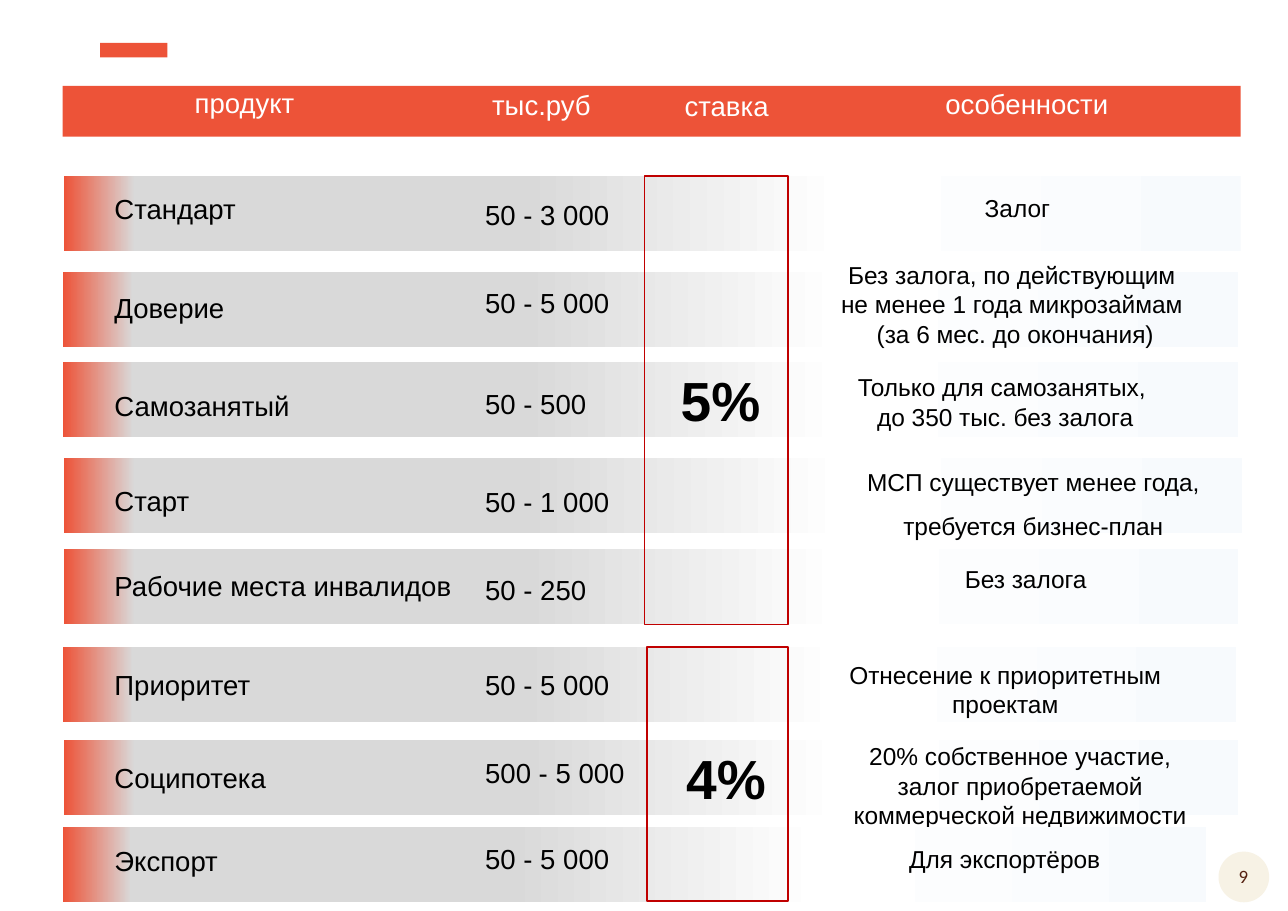
from lxml import etree
from pptx import Presentation
from pptx.dml.color import RGBColor
from pptx.enum import shapes, text
from pptx.oxml.ns import qn
from pptx.util import Pt

# Content: (text, left, top, width)
HEADERS = [
    ("продукт", 29.5, 52.5, 260.6),
    ("тыс.руб", 293, 54, 121.7),
    ("ставка", 414, 54.7, 121.7),
    ("особенности", 529.9, 53.3, 282.2),
]

# Each product: bar (left, top, width), name and its top, sum and its top,
# feature (text, left, top, width, line spacing)
PRODUCTS = [
    ((41.8, 115.2, 769), ("Стандарт", 121.7), ("50 - 3 000", 126),
     ("Залог", 529.2, 122.4, 271.4, 1)),
    ((41, 177.8, 768.2), ("Доверие", 186.5), ("50 - 5 000", 183.6),
     ("Без залога, по действующим \vне менее 1 года микрозаймам \v"
      "(за 6 мес. до окончания)", 529.9, 166.3, 267.1, 1)),
    ((41, 236.9, 768.2), ("Самозанятый", 250.6), ("50 - 500", 249.1),
     ("Только для самозанятых, \vдо 350 тыс. без залога", 516.2, 239.8, 281.5, 1)),
    ((41.8, 299.5, 769.7), ("Старт", 312.5), ("50 - 1 000", 313.2),
     ("МСП существует менее года,\vтребуется бизнес-план", 540.7, 292.3, 269.3, 1.5)),
    ((41.8, 358.6, 767.5), ("Рабочие места инвалидов", 368.6), ("50 - 250", 370.8),
     ("Без залога", 532.8, 365, 275, 1)),
    ((41, 422.6, 766.8), ("Приоритет", 432.7), ("50 - 5 000", 432.7),
     ("Отнесение к приоритетным\vпроектам", 517.7, 427.7, 278.6, 1)),
    ((41.8, 483.8, 767.5), ("Соципотека", 493.9), ("500 - 5 000", 490.3),
     ("20% собственное участие,\vзалог приобретаемой\vкоммерческой недвижимости",
      533.5, 481, 266.4, 1)),
    ((41, 540.7, 747.4), ("Экспорт", 547.9), ("50 - 5 000", 546.5),
     ("Для экспортёров", 535.7, 547.9, 241.9, 1)),
]

# Each rate: text, its left and top, frame (left, top, width, height)
RATES = [
    ("5%", 416.9, 236.2, (421.2, 115.2, 93.6, 293)),
    ("4%", 420.5, 483.1, (422.6, 422.6, 92.2, 166.3)),
]

THEME = {
    "accent": "ED5338", "frame": "C00000", "badge": "F7F2E5", "number": "562212",
    "ink": "000000", "paper": "FFFFFF", "font": "Arial", "number_font": "Calibri",
    "body": 18, "feature": 16, "rate": 36, "page": 12.3,
    "bar": [(0, "F7FAFD"), (34, "FFFFFF"), (61, "D9D9D9"),
            (94, "D9D9D9"), (100, "ED5338"), (100, "F2F2F2")],
}
BAR_HEIGHT = 49
NAME_LEFT, NAME_WIDTH = 67.7, 245
SUM_LEFT, SUM_WIDTH = 310, 113
CENTER = text.PP_ALIGN.CENTER
LEFT = text.PP_ALIGN.LEFT
RECT = shapes.MSO_SHAPE.RECTANGLE

prs = Presentation()
prs.slide_width, prs.slide_height = Pt(841.7), Pt(595.4)
s = prs.slides.add_slide(prs.slide_layouts[6])


def add_block(box, fill=None, line=None, kind=RECT):
    sp = s.shapes.add_shape(kind, *map(Pt, box))
    sp.shadow.inherit = False
    if fill:
        sp.fill.solid()
        sp.fill.fore_color.rgb = RGBColor.from_string(fill)
    else:
        sp.fill.background()
    if line:
        sp.line.color.rgb = RGBColor.from_string(line)
        sp.line.width = Pt(1.25)
    else:
        sp.line.fill.background()
    return sp


def add_bar(left, top, width):
    sp = add_block((left, top, width, BAR_HEIGHT))
    sp.fill.gradient()
    sp.fill.gradient_angle = 180
    stops = sp._element.spPr.find(qn("a:gradFill")).find(qn("a:gsLst"))
    for old in list(stops):
        stops.remove(old)
    for position, color in THEME["bar"]:
        stop = etree.SubElement(stops, qn("a:gs"), pos=str(position * 1000))
        etree.SubElement(stop, qn("a:srgbClr"), val=color)


def add_text(words, left, top, width, size, align=LEFT, color=THEME["ink"],
             font=THEME["font"], bold=False, spacing=1):
    lines = words.count("\v") + 1
    height = 7.2 + lines * size * 1.2 * spacing
    sp = s.shapes.add_textbox(Pt(left), Pt(top), Pt(width), Pt(height))
    tf = sp.text_frame
    tf.word_wrap = True
    p = tf.paragraphs[0]
    p.text = words
    p.alignment = align
    p.line_spacing = spacing
    p.font.size = Pt(size)
    p.font.name = font
    p.font.bold = bold
    p.font.color.rgb = RGBColor.from_string(color)


# Page number and accent mark
add_block((796.3, 556.6, 33.1, 33.1), THEME["badge"], kind=shapes.MSO_SHAPE.OVAL)
add_text("9", 794.2, 561.6, 36.7, THEME["page"], CENTER,
         THEME["number"], THEME["number_font"])
add_block((65.5, 28.1, 43.9, 9.4), THEME["accent"])

# Header band
add_block((41, 56.2, 769.7, 33.1), THEME["accent"])
for words, left, top, width in HEADERS:
    add_text(words, left, top, width, THEME["body"], CENTER, THEME["paper"])

# Product rows
for bar, (name, name_top), (amount, amount_top), feature in PRODUCTS:
    add_bar(*bar)
    add_text(name, NAME_LEFT, name_top, NAME_WIDTH, THEME["body"])
    add_text(amount, SUM_LEFT, amount_top, SUM_WIDTH, THEME["body"])
    *place, spacing = feature
    add_text(*place, THEME["feature"], CENTER, spacing=spacing)

# Rates and their frames
for rate, left, top, frame in RATES:
    add_block(frame, line=THEME["frame"])
    add_text(rate, left, top, 108, THEME["rate"], CENTER, bold=True)

prs.save("out.pptx")
